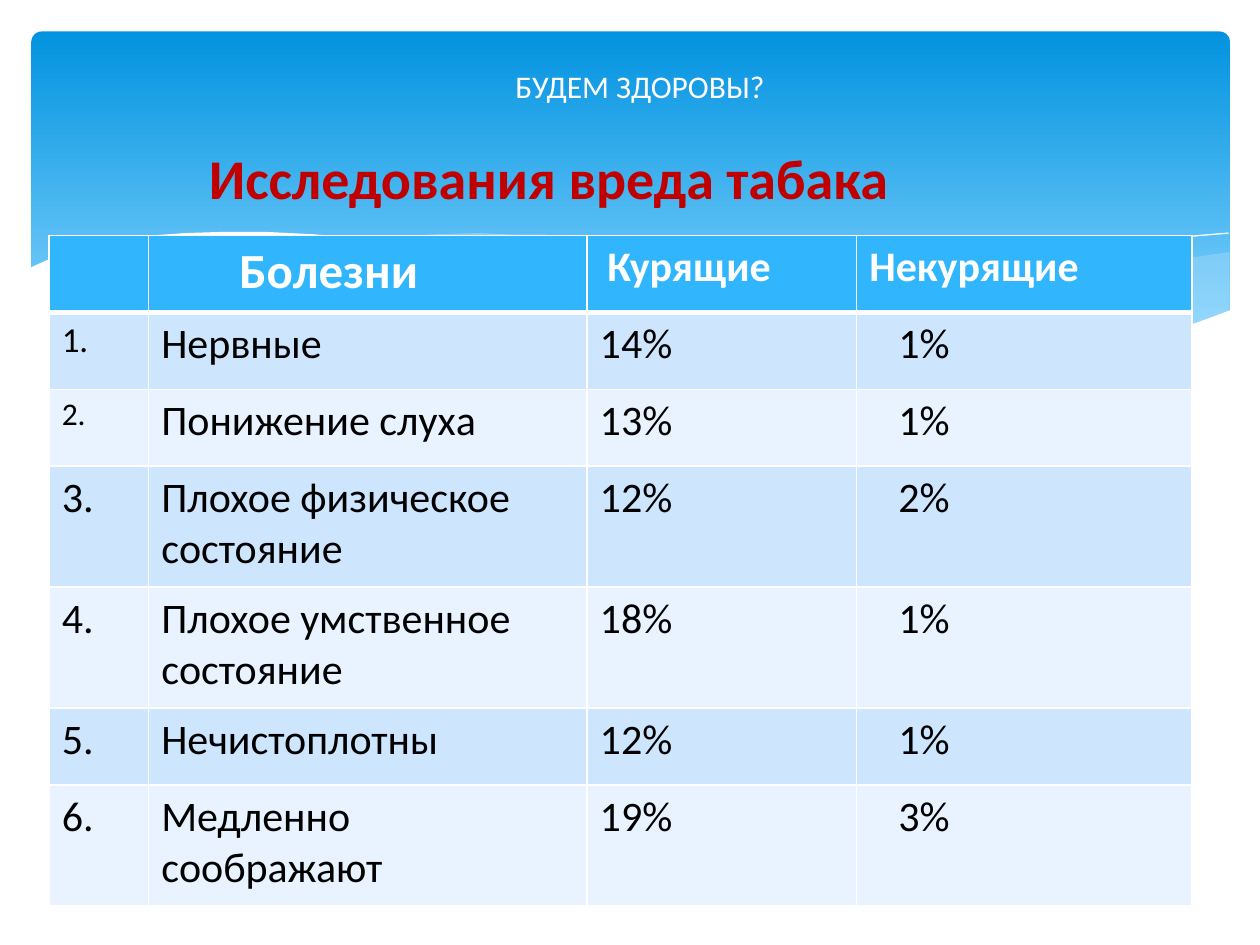
from lxml import etree
from pptx import Presentation, util as u
from pptx.dml.color import RGBColor
from pptx.enum import shapes, text
from pptx.oxml.ns import qn

WIDTH, HEIGHT = 10, 7.5
FONT = "Calibri"
COLORS = {
    "sky_top": "0293E0", "sky_bottom": "83D3FE", "mist": "C6E7FC", "white": "FFFFFF",
    "header": "31B6FD", "odd": "CEE5FE", "even": "E8F3FF", "ink": "000000", "red": "C00000",
}

HEADINGS = [
    ("", {"size": 18}, 0.1),
    ("Болезни", {"size": 28}, 0.72),
    ("Курящие", {"size": 24}, 0.16),
    ("Некурящие", {"size": 24}, 0.1),
]
DISEASES = [
    ("Нервные", 14, 1),
    ("Понижение слуха", 13, 1),
    ("Плохое физическое состояние", 12, 2),
    ("Плохое умственное состояние", 18, 1),
    ("Нечистоплотны", 12, 1),
    ("Медленно соображают", 19, 3),
]
NUMBER_SIZES = {1: 20, 2: 18}
BODY_SIZE = 24
BODY_INDENTS = [0.1, 0.1, 0.1, 0.33]
COLUMNS = [0.79, 3.48, 2.14, 2.66]
ROW, TALL_ROW = 0.61, 0.96
TALL_FROM = 16
TABLE_LEFT, TABLE_TOP = 0.39, 1.87

CAPTIONS = [
    ("БУДЕМ ЗДОРОВЫ?", (0.33, 0.5, 9.5, 0.36), {"size": 18}, "white",
     {"word_wrap": True, "vertical_anchor": text.MSO_ANCHOR.MIDDLE}, text.PP_ALIGN.CENTER),
    ("Исследования вреда табака", (1.56, 1.09, 5.68, 0.64), {"size": 32, "bold": True}, "red",
     {"word_wrap": False, "auto_size": text.MSO_AUTO_SIZE.SHAPE_TO_FIT_TEXT}, text.PP_ALIGN.LEFT),
]

RIGHT_MIST = [
    (976, 200), (948, 204), (921, 210), (891, 216), (861, 223), (805, 237), (753, 248),
    (706, 257), (661, 265), (691, 269), (719, 272), (745, 275), (769, 277), (803, 278),
    (844, 277), (872, 274), (897, 270), (921, 265), (942, 259), (963, 252), (976, 247),
]
CENTRE_MIST = [
    (893, 273), (866, 269), (807, 260), (741, 247), (668, 231), (598, 214), (555, 205),
    (514, 198), (465, 191), (420, 187), (380, 185), (344, 186), (313, 188), (286, 191),
    (323, 196), (362, 203), (404, 211), (449, 222), (530, 240), (601, 255), (665, 266),
    (722, 274), (773, 277), (818, 278), (857, 277), (893, 273),
]
LEFT_CREST = [
    (309, 195), (328, 192), (353, 189), (387, 187), (433, 187), (489, 190), (533, 194),
    (582, 200), (636, 208), (695, 219), (760, 233), (831, 251), (907, 272),
]
RIGHT_CREST = [
    (613, 257), (653, 246), (695, 235), (748, 223), (806, 210), (866, 199), (910, 192),
    (951, 187), (975, 185),
]
WHITE_WAVE = [
    (977, 246), (950, 256), (920, 265), (887, 271), (850, 275), (809, 277), (761, 275),
    (708, 270), (648, 262), (579, 250), (503, 233), (447, 220), (391, 207), (340, 197),
    (292, 190), (250, 186), (211, 184), (177, 184), (146, 185), (119, 187), (95, 191),
    (76, 195), (59, 199), (46, 203), (36, 207), (23, 213), (23, 329), (977, 329),
]
WAVES = [
    (RIGHT_MIST, "mist", 29),
    (CENTRE_MIST, "mist", 40),
    (LEFT_CREST, None, 100),
    (RIGHT_CREST, None, 100),
    (WHITE_WAVE, "white", 100),
]


def rgb(name):
    return RGBColor.from_string(COLORS[name])


def inches(lengths):
    return [u.Inches(length) for length in lengths]


def apply(target, settings):
    for key, value in settings.items():
        setattr(target, key, value)


def write(paragraph, words, style, color):
    run = paragraph.add_run()
    run.text = words
    apply(run.font, {"name": FONT, **style, "size": u.Pt(style["size"])})
    run.font.color.rgb = rgb(color)


def add_sky(slide):
    sky = slide.shapes.add_shape(
        shapes.MSO_SHAPE.ROUNDED_RECTANGLE, *inches((0.25, 0.25, 9.51, 2.7)))
    sky.adjustments[0] = 0.03
    sky.shadow.inherit = False
    sky.line.fill.background()
    sky.fill.gradient()
    sky.fill.gradient_angle = 270
    for stop, (position, color) in zip(
            sky.fill.gradient_stops, [(0, "sky_top"), (0.9, "sky_bottom")]):
        stop.position = position
        stop.color.rgb = rgb(color)


def add_wave(slide, points, color, opacity):
    builder = slide.shapes.build_freeform(*points[0], scale=u.Inches(0.01))
    builder.add_line_segments(points[1:], close=color is not None)
    wave = builder.convert_to_shape()
    wave.shadow.inherit = False
    if color is None:
        wave.fill.background()
        wave.line.color.rgb = rgb("white")
        wave.line.width = u.Pt(0)
        return
    wave.line.fill.background()
    wave.fill.solid()
    wave.fill.fore_color.rgb = rgb(color)
    if opacity < 100:
        tint = wave.element.spPr.find(qn("a:solidFill"))[0]
        etree.SubElement(tint, qn("a:alpha"), val=str(opacity * 1000))


def add_borders(cell, row):
    top, bottom = (3 if row == 1 else 1), (3 if row == 0 else 1)
    for side, points in {"L": 1, "R": 1, "T": top, "B": bottom}.items():
        edge = etree.SubElement(
            cell._tc.get_or_add_tcPr(), qn(f"a:ln{side}"), w=str(u.Pt(points)))
        paint = etree.SubElement(edge, qn("a:solidFill"))
        etree.SubElement(paint, qn("a:srgbClr"), val=COLORS["white"])


def fill_cell(cell, row, words, style, indent, fill, color):
    add_borders(cell, row)
    cell.fill.solid()
    cell.fill.fore_color.rgb = rgb(fill)
    cell.margin_left = u.Inches(indent)
    if words:
        write(cell.text_frame.paragraphs[0], words, style, color)


def add_disease_table(slide):
    heights = [ROW] + [TALL_ROW if len(name) > TALL_FROM else ROW for name, *_ in DISEASES]
    table = slide.shapes.add_table(
        len(heights), len(COLUMNS),
        *inches((TABLE_LEFT, TABLE_TOP, sum(COLUMNS), sum(heights)))).table
    for column, width in zip(table.columns, COLUMNS):
        column.width = u.Inches(width)
    for row, height in zip(table.rows, heights):
        row.height = u.Inches(height)
    for column, (heading, style, indent) in enumerate(HEADINGS):
        fill_cell(table.cell(0, column), 0, heading, {**style, "bold": True},
                  indent, "header", "white")
    for number, (name, smokers, others) in enumerate(DISEASES, 1):
        entries = [f"{number}.", name, f"{smokers}%", f"{others}%"]
        sizes = [NUMBER_SIZES.get(number, BODY_SIZE)] + [BODY_SIZE] * 3
        for column, (entry, size, indent) in enumerate(zip(entries, sizes, BODY_INDENTS)):
            fill_cell(table.cell(number, column), number, entry,
                      {"size": size, "bold": False}, indent,
                      "odd" if number % 2 else "even", "ink")


def add_caption(slide, words, place, style, color, frame_format, alignment):
    frame = slide.shapes.add_textbox(*inches(place)).text_frame
    apply(frame, frame_format)
    frame.paragraphs[0].alignment = alignment
    write(frame.paragraphs[0], words, style, color)


def main():
    deck = Presentation()
    deck.slide_width, deck.slide_height = inches((WIDTH, HEIGHT))
    slide = deck.slides.add_slide(deck.slide_layouts[6])
    add_sky(slide)
    for wave in WAVES:
        add_wave(slide, *wave)
    add_disease_table(slide)
    for caption in CAPTIONS:
        add_caption(slide, *caption)
    deck.save("out.pptx")


if __name__ == "__main__":
    main()
